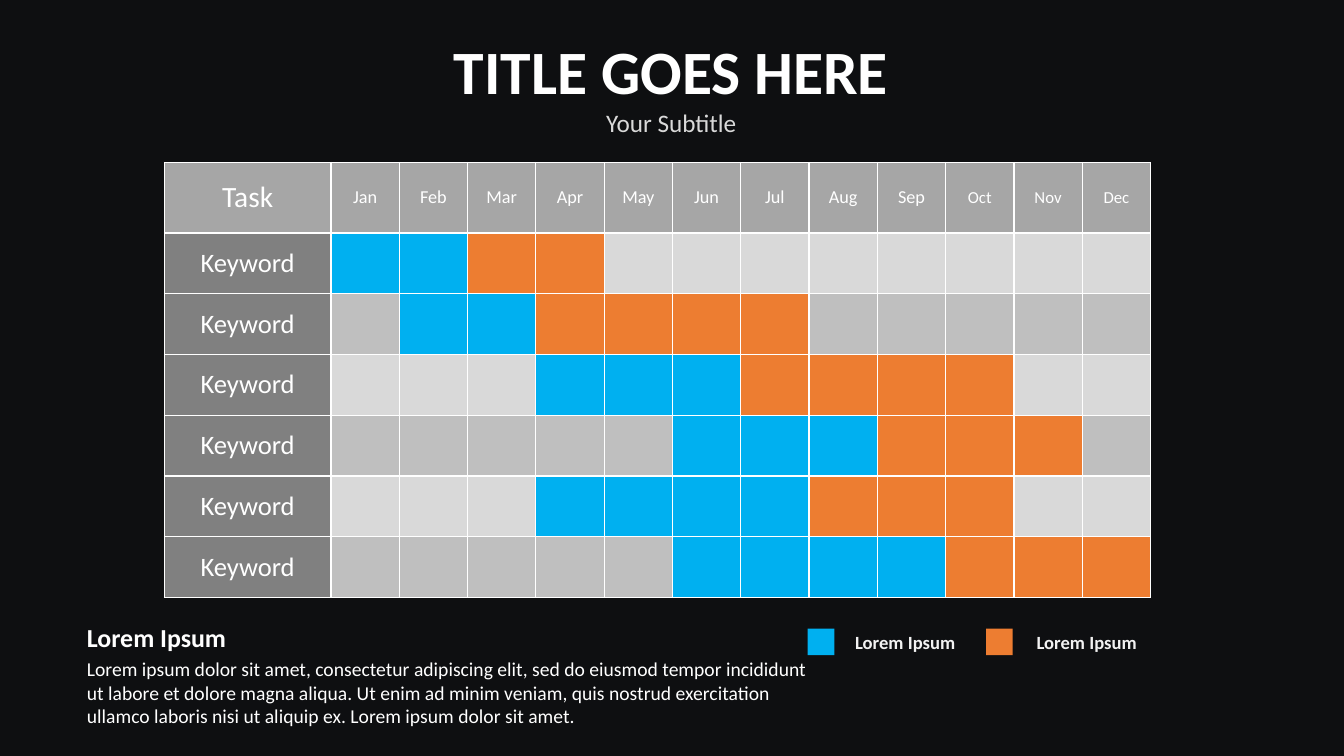
import pptx
import pptx.dml.color
import pptx.enum.shapes
import pptx.enum.text
import pptx.oxml
import pptx.oxml.ns
import pptx.util
from dataclasses import dataclass

Pt = pptx.util.Pt
CENTER = pptx.enum.text.PP_ALIGN.CENTER
LEFT = pptx.enum.text.PP_ALIGN.LEFT

TITLE = "TITLE GOES HERE"
SUBTITLE = "Your Subtitle"
TASK_HEADING = "Task"
MONTHS = ["Jan", "Feb", "Mar", "Apr", "May", "Jun",
          "Jul", "Aug", "Sep", "Oct", "Nov", "Dec"]
# task, first month (0 = Jan), months in first phase, months in second phase
TASKS = [
    ("Keyword", 0, 2, 2),
    ("Keyword", 1, 2, 4),
    ("Keyword", 3, 3, 4),
    ("Keyword", 5, 3, 3),
    ("Keyword", 3, 4, 3),
    ("Keyword", 5, 4, 3),
]
LEGEND = ["Lorem Ipsum", "Lorem Ipsum"]
NOTE_HEADING = "Lorem Ipsum"
NOTE = ("Lorem ipsum dolor sit amet, consectetur adipiscing elit, sed do eiusmod "
        "tempor incididunt ut labore et dolore magna aliqua. Ut enim ad minim veniam, "
        "quis nostrud exercitation ullamco laboris nisi ut aliquip ex. "
        "Lorem ipsum dolor sit amet.")


@dataclass
class Theme:
    font: str = "Calibri"
    background: str = "0E0F11"
    text: str = "FFFFFF"
    subtitle: str = "D9D9D9"
    legend: str = "F2F2F2"
    grid: str = "FFFFFF"
    header: str = "A6A6A6"
    task: str = "808080"
    idle: tuple = ("D9D9D9", "BFBFBF")
    phases: tuple = ("00B0F0", "ED7D31")
    title_size: float = 44
    subtitle_size: float = 18
    heading_size: float = 21
    task_size: float = 19
    month_size: float = 13
    late_month_size: float = 12
    legend_size: float = 13.3
    note_heading_size: float = 18.5
    note_size: float = 14


theme = Theme()


def rgb(color):
    return pptx.dml.color.RGBColor.from_string(color)


def paint(part, color):
    part.fill.solid()
    part.fill.fore_color.rgb = rgb(color)


def write(paragraph, text, size, color=theme.text, bold=False, align=CENTER):
    paragraph.text = text
    paragraph.alignment = align
    font = paragraph.font
    font.name, font.size, font.bold = theme.font, Pt(size), bold
    font.color.rgb = rgb(color)


def add_text_frame(slide, left, top, width, height, wrap=True):
    frame = slide.shapes.add_textbox(Pt(left), Pt(top), Pt(width), Pt(height)).text_frame
    frame.word_wrap = wrap
    return frame


def style_cell(cell, color):
    """Fill the cell, inset it and draw its four thin borders."""
    cell.margin_left = cell.margin_right = cell.margin_top = cell.margin_bottom = Pt(5)
    cell.vertical_anchor = pptx.enum.text.MSO_ANCHOR.MIDDLE
    paint(cell, color)
    properties = cell._tc.get_or_add_tcPr()
    for position, side in enumerate(("lnL", "lnR", "lnT", "lnB")):
        properties.insert(position, pptx.oxml.parse_xml(
            f'<a:{side} {pptx.oxml.ns.nsdecls("a")} w="{Pt(1)}"><a:solidFill>'
            f'<a:srgbClr val="{theme.grid}"/></a:solidFill></a:{side}>'))


def add_schedule(slide):
    task_width, month_width, header_height, row_height = 119, 48.8, 50.4, 43.4
    table = slide.shapes.add_table(
        len(TASKS) + 1, len(MONTHS) + 1, Pt(117.4), Pt(116),
        Pt(task_width + month_width * len(MONTHS)),
        Pt(header_height + row_height * len(TASKS))).table
    table.first_row = table.horz_banding = False
    for index, column in enumerate(table.columns):
        column.width = Pt(month_width if index else task_width)
    for index, row in enumerate(table.rows):
        row.height = Pt(row_height if index else header_height)

    for column, heading in enumerate([TASK_HEADING] + MONTHS):
        cell = table.cell(0, column)
        style_cell(cell, theme.header)
        if column == 0:
            size = theme.heading_size
        else:
            size = theme.month_size if column < 10 else theme.late_month_size
        write(cell.text_frame.paragraphs[0], heading, size)

    for row, (task, start, first, second) in enumerate(TASKS, 1):
        rest = len(MONTHS) - start - first - second
        idle = theme.idle[(row - 1) % 2]
        colors = ([theme.task] + [idle] * start + [theme.phases[0]] * first
                  + [theme.phases[1]] * second + [idle] * rest)
        for column, color in enumerate(colors):
            style_cell(table.cell(row, column), color)
        write(table.cell(row, 0).text_frame.paragraphs[0], task, theme.task_size)


def add_legend(slide):
    for index, (label, color) in enumerate(zip(LEGEND, theme.phases)):
        left = 577 + index * 127.4
        swatch = slide.shapes.add_shape(
            pptx.enum.shapes.MSO_SHAPE.RECTANGLE, Pt(left), Pt(449), Pt(19), Pt(19))
        swatch.shadow.inherit = False
        paint(swatch, color)
        swatch.line.fill.background()
        frame = add_text_frame(slide, left + 31.5 + index * 2.2, 451, 76.3, 16, wrap=False)
        frame.margin_left = frame.margin_right = frame.margin_top = frame.margin_bottom = 0
        write(frame.paragraphs[0], label, theme.legend_size, theme.legend, bold=True)


def main():
    deck = pptx.Presentation()
    deck.slide_width, deck.slide_height = Pt(960), Pt(540)
    slide = deck.slides.add_slide(deck.slide_layouts[6])
    paint(slide.background, theme.background)

    add_schedule(slide)
    add_legend(slide)

    heading = add_text_frame(slide, 262.8, 20.2, 433.4, 82)
    write(heading.paragraphs[0], TITLE, theme.title_size, bold=True)
    write(heading.add_paragraph(), SUBTITLE, theme.subtitle_size, theme.subtitle)

    note = add_text_frame(slide, 55, 440.6, 543, 84.2)
    write(note.paragraphs[0], NOTE_HEADING, theme.note_heading_size, bold=True, align=LEFT)
    body = note.add_paragraph()
    write(body, NOTE, theme.note_size, align=LEFT)
    body.space_before = Pt(3)

    deck.save("out.pptx")


if __name__ == "__main__":
    main()
